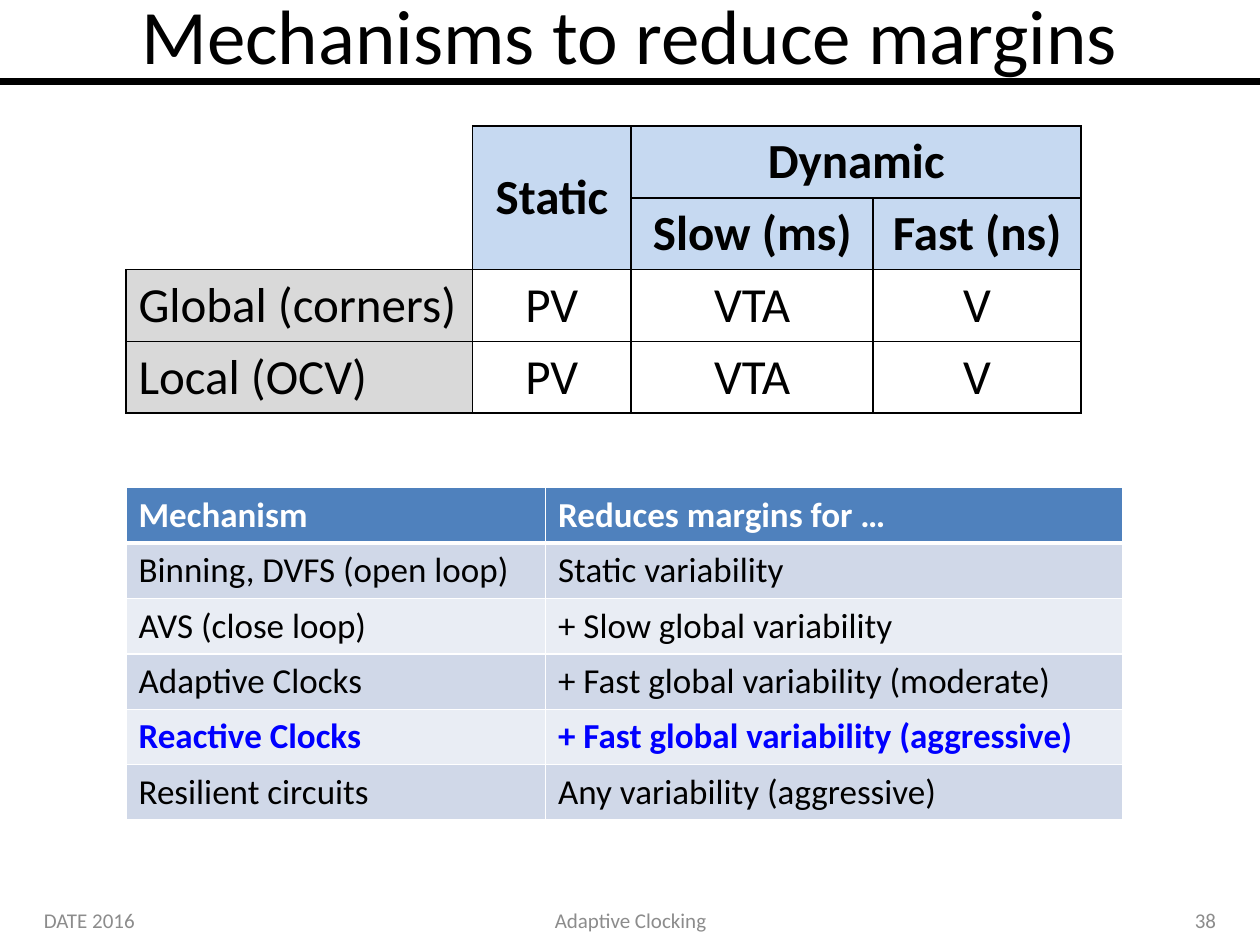
from lxml import etree
from pptx import Presentation
from pptx.dml.color import RGBColor
from pptx.enum.text import MSO_ANCHOR, PP_ALIGN
from pptx.oxml.ns import qn
from pptx.util import Inches, Pt

LEFT, CENTER, RIGHT = PP_ALIGN.LEFT, PP_ALIGN.CENTER, PP_ALIGN.RIGHT
MIDDLE = MSO_ANCHOR.MIDDLE

THEME = {
    "font": "Calibri", "title": 44, "matrix": 28, "list": 20, "footer": 12,
    "black": "000000", "white": "FFFFFF", "gray": "8C8C8C", "highlight": "0000FF",
    "matrix_head": "C6D9F1", "matrix_side": "D9D9D9",
    "list_head": "4F81BD", "bands": ("D0D8E8", "E9EDF4"),
}

TITLE = "Mechanisms to reduce margins"
FOOTERS = [  # text, left, width, alignment
    ("DATE 2016", 0.25, 2.33, LEFT),
    ("Adaptive Clocking", 3.42, 3.17, CENTER),
    ("38", 7.42, 2.33, RIGHT),
]
VARIABILITY = [
    ("", "Static", "Dynamic", ""),
    ("", "", "Slow (ms)", "Fast (ns)"),
    ("Global (corners)", "PV", "VTA", "V"),
    ("Local (OCV)", "PV", "VTA", "V"),
]
VARIABILITY_HEAD_ROWS = 2
MECHANISMS = [
    ("Mechanism", "Reduces margins for …"),
    ("Binning, DVFS (open loop)", "Static variability"),
    ("AVS (close loop)", "+ Slow global variability"),
    ("Adaptive Clocks", "+ Fast global variability (moderate)"),
    ("Reactive Clocks", "+ Fast global variability (aggressive)"),
    ("Resilient circuits", "Any variability (aggressive)"),
]
HIGHLIGHTED = "Reactive Clocks"


def write(text_frame, text, size, color, alignment=LEFT, bold=False):
    text_frame.text = text
    paragraph = text_frame.paragraphs[0]
    paragraph.alignment = alignment
    for run in paragraph.runs:
        run.font.name = THEME["font"]
        run.font.size = Pt(size)
        run.font.bold = bold
        run.font.color.rgb = RGBColor.from_string(color)


def set_borders(cell, color, widths):
    """Draw the L, R, T, B sides in points; a width of 0 hides a side."""
    properties = cell._tc.get_or_add_tcPr()
    for index, (side, width) in enumerate(zip("LRTB", widths)):
        line = etree.Element(qn(f"a:ln{side}"), w=str(Pt(width)))
        if width:
            fill = etree.SubElement(line, qn("a:solidFill"))
            etree.SubElement(fill, qn("a:srgbClr"), val=color)
        else:
            etree.SubElement(line, qn("a:noFill"))
        properties.insert(index, line)


def set_fill(cell, color):
    if color:
        cell.fill.solid()
        cell.fill.fore_color.rgb = RGBColor.from_string(color)
    else:
        cell.fill.background()


def add_table(slide, rows, left, top, column_widths, row_height):
    table = slide.shapes.add_table(
        len(rows), len(column_widths), Inches(left), Inches(top),
        Inches(sum(column_widths)), Inches(row_height * len(rows))).table
    table.first_row = table.horz_banding = False
    for column, width in zip(table.columns, column_widths):
        column.width = Inches(width)
    for row in table.rows:
        row.height = Inches(row_height)
    return table


def add_variability_table(slide):
    table = add_table(slide, VARIABILITY, 1, 1, (2.75, 1.26, 1.92, 1.65), 0.57)
    table.cell(0, 1).merge(table.cell(1, 1))
    table.cell(0, 2).merge(table.cell(0, 3))
    for r, row in enumerate(VARIABILITY):
        for c, text in enumerate(row):
            cell = table.cell(r, c)
            head, side = r < VARIABILITY_HEAD_ROWS, c == 0
            if head and side:
                fill = None
                borders = (0, 1, 0, int(r == VARIABILITY_HEAD_ROWS - 1))
            else:
                fill = THEME["matrix_head"] if head else THEME["matrix_side"] if side else None
                borders = (1, 1, 1, 1)
            set_fill(cell, fill)
            set_borders(cell, THEME["black"], borders)
            if text:
                write(cell.text_frame, text, THEME["matrix"], THEME["black"],
                      LEFT if side else CENTER, head)
    table.cell(0, 1).vertical_anchor = MIDDLE


def add_mechanism_table(slide):
    table = add_table(slide, MECHANISMS, 1, 3.87, (3.33, 4.58), 0.44)
    for r, row in enumerate(MECHANISMS):
        head, highlighted = r == 0, row[0] == HIGHLIGHTED
        fill = THEME["list_head"] if head else THEME["bands"][(r - 1) % 2]
        color = THEME["white" if head else "highlight" if highlighted else "black"]
        borders = (1, 1, 3 if r == 1 else 1, 3 if head else 1)
        for c, text in enumerate(row):
            cell = table.cell(r, c)
            set_fill(cell, fill)
            set_borders(cell, THEME["white"], borders)
            write(cell.text_frame, text, THEME["list"], color, bold=head or highlighted)


def add_title(slide):
    title = slide.shapes.title
    title.left, title.top = Inches(0.5), Inches(-0.11)
    title.width, title.height = Inches(9), Inches(0.75)
    title.text_frame.vertical_anchor = MIDDLE
    write(title.text_frame, TITLE, THEME["title"], THEME["black"], CENTER)


def add_title_rule(slide):
    rule = slide.shapes.add_connector(1, 0, Inches(0.65), Inches(10), Inches(0.65))
    rule.line.width = Pt(4)
    rule.line.color.rgb = RGBColor.from_string(THEME["black"])
    etree.SubElement(rule._element.spPr, qn("a:effectLst"))


def add_footers(slide):
    for text, left, width, alignment in FOOTERS:
        box = slide.shapes.add_textbox(Inches(left), Inches(7.1), Inches(width), Inches(0.4))
        box.text_frame.word_wrap = True
        box.text_frame.vertical_anchor = MIDDLE
        write(box.text_frame, text, THEME["footer"], THEME["gray"], alignment)


def main():
    presentation = Presentation()
    presentation.slide_width, presentation.slide_height = Inches(10), Inches(7.5)
    slide = presentation.slides.add_slide(presentation.slide_layouts[5])
    add_title_rule(slide)
    add_title(slide)
    add_footers(slide)
    add_variability_table(slide)
    add_mechanism_table(slide)
    presentation.save("out.pptx")


if __name__ == "__main__":
    main()
